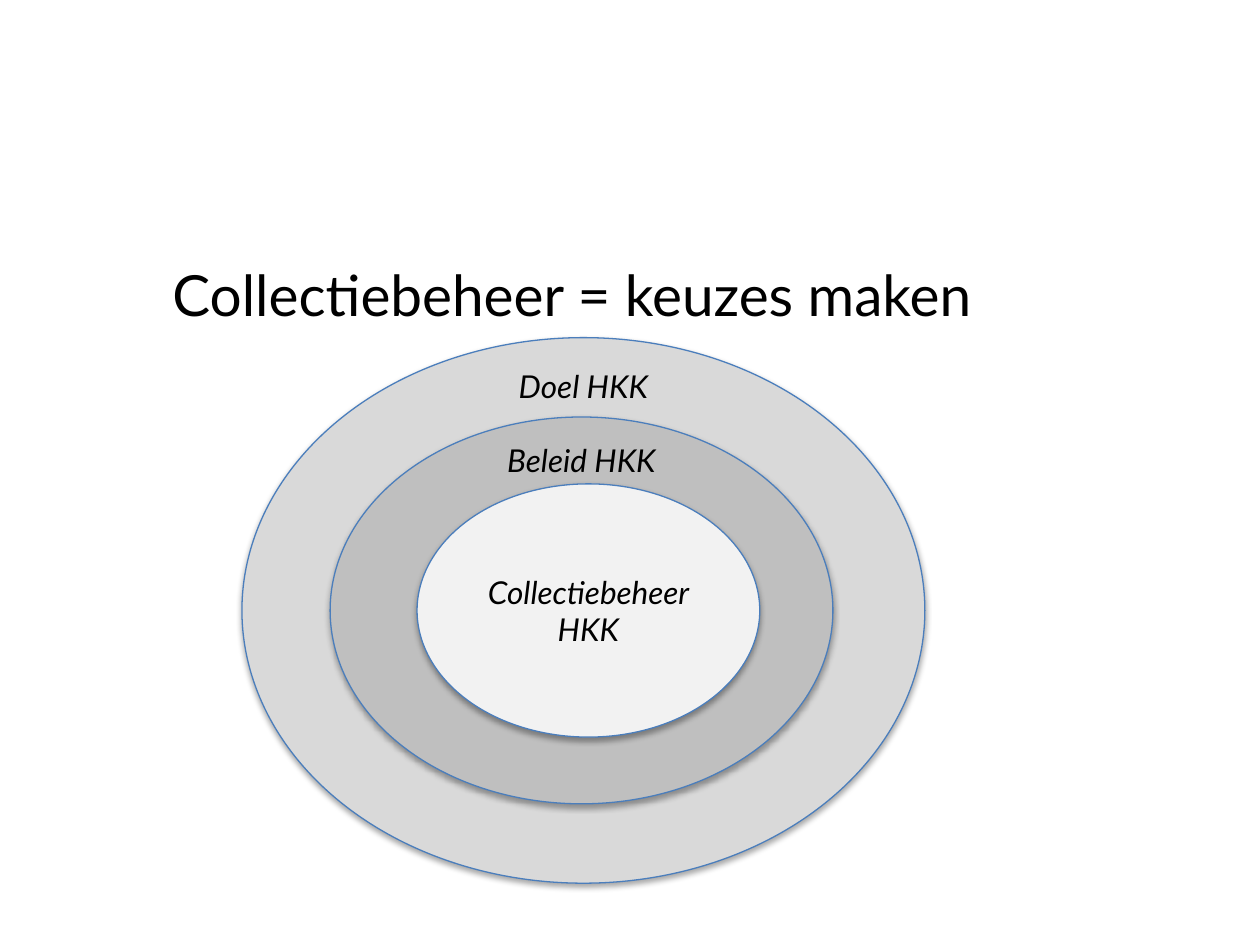
from lxml import etree
from pptx import Presentation
from pptx.dml.color import RGBColor
from pptx.enum.shapes import MSO_SHAPE
from pptx.enum.text import MSO_ANCHOR, PP_ALIGN
from pptx.oxml import parse_xml
from pptx.util import Inches, Pt

COLORS = {"text": "000000", "line": "4B7EBC", "goal": "D9D9D9",
          "policy": "BFBFBF", "care": "F2F2F2"}
SHADOW = (
    '<a:effectLst xmlns:a="http://schemas.openxmlformats.org/drawingml/2006/main">'
    '<a:outerShdw blurRad="40000" dist="23000" dir="5400000" rotWithShape="0">'
    '<a:srgbClr val="000000"><a:alpha val="35000"/></a:srgbClr>'
    '</a:outerShdw></a:effectLst>')


def write(shape, text, size, align, italic):
    tf = shape.text_frame
    tf.word_wrap = True
    tf.vertical_anchor = MSO_ANCHOR.MIDDLE
    p = tf.paragraphs[0]
    p.alignment = align
    r = p.add_run()
    r.text = text
    for name, value in {"name": "Lato", "size": Pt(size), "italic": italic}.items():
        setattr(r.font, name, value)
    r.font.color.rgb = RGBColor.from_string(COLORS["text"])


prs = Presentation()
prs.slide_width, prs.slide_height = Inches(10), Inches(7.5)
s = prs.slides.add_slide(prs.slide_layouts[6])

# Title
title = s.shapes.add_textbox(Inches(1.27), Inches(1.98), Inches(7.48), Inches(0.7))
write(title, "Collectiebeheer = keuzes maken", 32.4, PP_ALIGN.LEFT, False)

# Nested ellipses, outermost first; label_y is the middle of a label near the top
rings = [
    ("Doel HKK", "goal", (1.92, 2.68, 5.42, 4.33), 3.06),
    ("Beleid HKK", "policy", (2.62, 3.31, 3.99, 3.07), 3.65),
    ("Collectiebeheer HKK", "care", (3.31, 3.84, 2.72, 2.01), None),
]
for text, color, box, label_y in rings:
    left, top, width, height = [Inches(v) for v in box]
    ring = s.shapes.add_shape(MSO_SHAPE.OVAL, left, top, width, height)
    ring.fill.solid()
    ring.fill.fore_color.rgb = RGBColor.from_string(COLORS[color])
    ring.line.color.rgb = RGBColor.from_string(COLORS["line"])
    ring.line.width = Pt(0.75)
    ring._element.spPr.append(parse_xml(SHADOW))
    label = ring
    if label_y:
        label = s.shapes.add_textbox(left, Inches(label_y - 0.2), width, Inches(0.4))
    write(label, text, 18, PP_ALIGN.CENTER, True)

prs.save("out.pptx")
